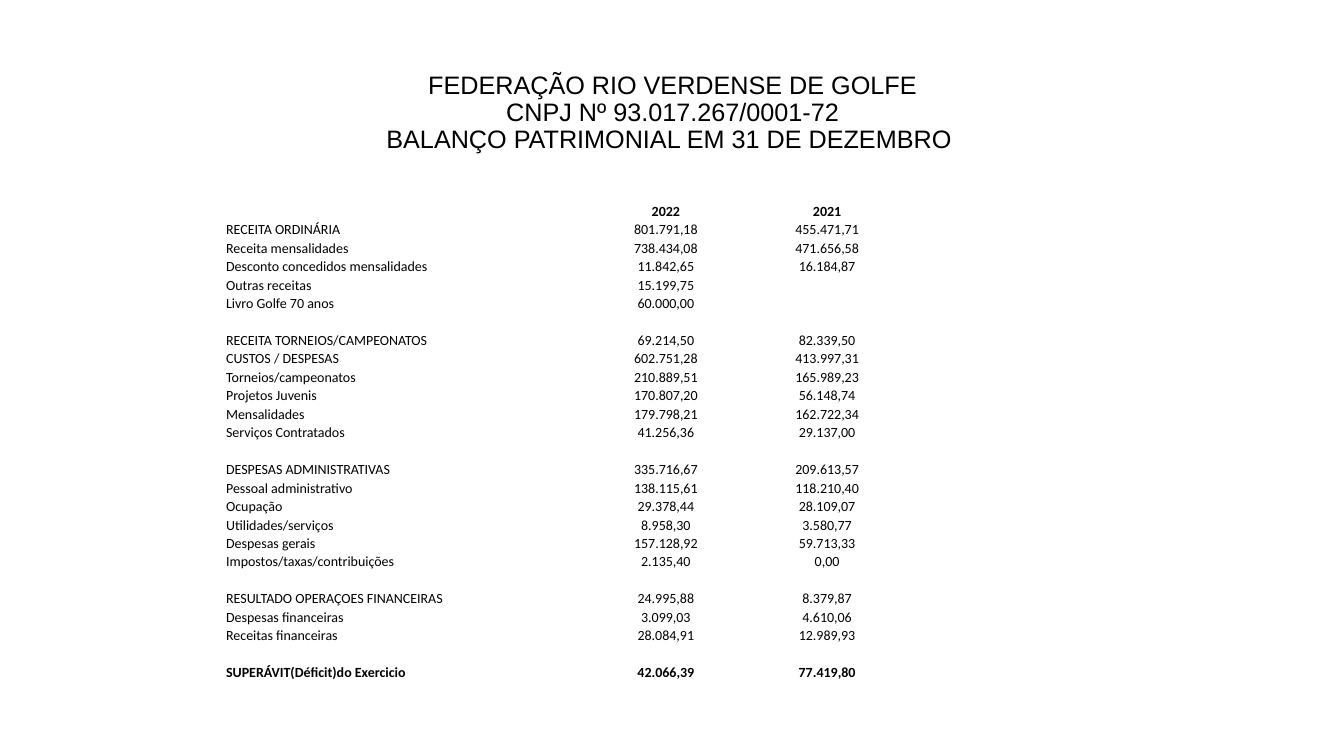
from dataclasses import dataclass

from pptx import Presentation
from pptx import util as u
from pptx.dml.color import RGBColor
from pptx.enum import text


@dataclass(frozen=True)
class Theme:
    """Colours, fonts and type sizes of the balance sheet."""
    ink: RGBColor = RGBColor(0, 0, 0)
    title_font: str = "Arial"
    title_size: int = 18
    table_font: str = "Calibri"
    table_size: int = 10


class SlideBuilder:
    """Places styled elements on a grid of 12 columns by 15 rows."""

    def __init__(self, presentation, theme):
        self.theme = theme
        self.column = presentation.slide_width / 12
        self.row = presentation.slide_height / 15
        self.slide = presentation.slides.add_slide(presentation.slide_layouts[6])

    def place(self, left, top, width, height):
        """Turn grid units into slide lengths."""
        return (round(left * self.column), round(top * self.row),
                round(width * self.column), round(height * self.row))

    def style(self, paragraph, font, size, bold=False, centred=True):
        """Set the font and alignment of a paragraph."""
        paragraph.alignment = text.PP_ALIGN.CENTER if centred else text.PP_ALIGN.LEFT
        paragraph.font.name = font
        paragraph.font.size = u.Pt(size)
        paragraph.font.bold = bold
        paragraph.font.color.rgb = self.theme.ink

    def title(self, lines, *box):
        """Add a centred heading with line breaks."""
        frame = self.slide.shapes.add_textbox(*self.place(*box)).text_frame
        frame.word_wrap = True
        frame.vertical_anchor = text.MSO_ANCHOR.MIDDLE
        paragraph = frame.paragraphs[0]
        paragraph.text = "\v".join(lines)
        paragraph.line_spacing = 0.9
        self.style(paragraph, self.theme.title_font, self.theme.title_size)

    def cell(self, cell, value, bold, centred):
        """Fill and style one table cell."""
        cell.fill.background()
        cell.vertical_anchor = text.MSO_ANCHOR.BOTTOM
        cell.margin_left = cell.margin_right = cell.margin_top = u.Inches(0.01)
        cell.margin_bottom = 0
        paragraph = cell.text_frame.paragraphs[0]
        paragraph.text = value
        self.style(paragraph, self.theme.table_font, self.theme.table_size, bold, centred)
        if not value:
            end = paragraph._p.get_or_add_endParaRPr()
            end.set("sz", str(self.theme.table_size * 100))

    def table(self, entries, widths, left, top, height):
        """Add a plain table whose labels span several columns."""
        box = self.place(left, top, sum(widths), height)
        table = self.slide.shapes.add_table(len(entries), len(widths), *box).table
        table.first_row = table.horz_banding = False
        for column, width in zip(table.columns, widths):
            column.width = round(width * self.column)
        for index, (span, label, *amounts) in enumerate(entries):
            table.rows[index].height = round(height * self.row / len(entries))
            bold = index in (0, len(entries) - 1)
            values = [label, "", "", *amounts]
            for position, value in enumerate(values):
                self.cell(table.cell(index, position), value, bold, position > 2)
            if span > 1:
                table.cell(index, 0).merge(table.cell(index, span - 1))


BLANK = (1, "", "", "")
ENTRIES = [
    (1, "", "2022", "2021"),
    (2, "RECEITA ORDINÁRIA", "801.791,18", "455.471,71"),
    (3, "Receita mensalidades", "738.434,08", "471.656,58"),
    (3, "Desconto concedidos mensalidades", "11.842,65", "16.184,87"),
    (2, "Outras receitas", "15.199,75", ""),
    (2, "Livro Golfe 70 anos", "60.000,00", ""),
    BLANK,
    (3, "RECEITA TORNEIOS/CAMPEONATOS", "69.214,50", "82.339,50"),
    (2, "CUSTOS / DESPESAS", "602.751,28", "413.997,31"),
    (3, "Torneios/campeonatos", "210.889,51", "165.989,23"),
    (2, "Projetos Juvenis", "170.807,20", "56.148,74"),
    (2, "Mensalidades", "179.798,21", "162.722,34"),
    (3, "Serviços Contratados", "41.256,36", "29.137,00"),
    BLANK,
    (3, "DESPESAS ADMINISTRATIVAS", "335.716,67", "209.613,57"),
    (3, "Pessoal administrativo", "138.115,61", "118.210,40"),
    (2, "Ocupação", "29.378,44", "28.109,07"),
    (2, "Utilidades/serviços", "8.958,30", "3.580,77"),
    (2, "Despesas gerais", "157.128,92", "59.713,33"),
    (3, "Impostos/taxas/contribuições", "2.135,40", "0,00"),
    BLANK,
    (3, "RESULTADO OPERAÇOES FINANCEIRAS", "24.995,88", "8.379,87"),
    (2, "Despesas financeiras", "3.099,03", "4.610,06"),
    (2, "Receitas financeiras", "28.084,91", "12.989,93"),
    BLANK,
    (3, "SUPERÁVIT(Déficit)do Exercicio", "42.066,39", "77.419,80"),
]


def main():
    """Build and save the balance sheet slide."""
    presentation = Presentation()
    presentation.slide_width = u.Inches(13.33)
    presentation.slide_height = u.Inches(7.5)
    builder = SlideBuilder(presentation, Theme())
    builder.title(["FEDERAÇÃO RIO VERDENSE DE GOLFE",
                   "CNPJ Nº 93.017.267/0001-72",
                   "BALANÇO PATRIMONIAL EM 31 DE DEZEMBRO "],
                  0.83, 0.8, 10.35, 2.9)
    builder.table(ENTRIES, [0.8, 0.8, 1.59, 1.49, 1.39], 2.01, 4, 9.52)
    presentation.save("out.pptx")


if __name__ == "__main__":
    main()
